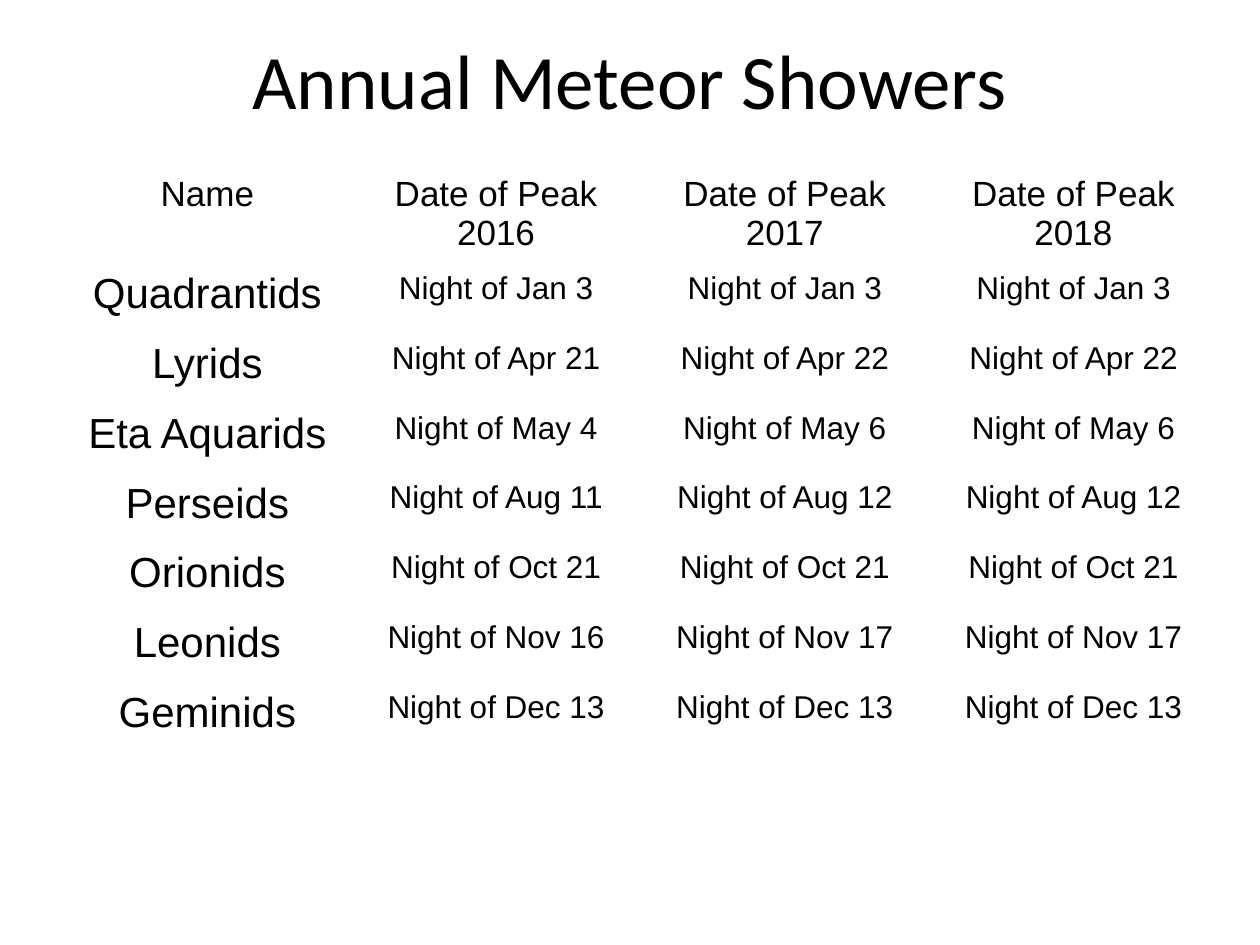
from pptx import Presentation
from pptx.dml.color import RGBColor
from pptx.enum.text import MSO_ANCHOR, PP_ALIGN
from pptx.util import Pt

CENTER = PP_ALIGN.CENTER
MIDDLE = MSO_ANCHOR.MIDDLE

COLORS = {"text": "000000"}
TITLE_FONT = {"name": "Calibri", "size": Pt(44)}
HEADER_FONT = {"name": "Arial", "size": Pt(20)}
NAME_FONT = {"name": "Arial", "size": Pt(24)}
DATE_FONT = {"name": "Arial", "size": Pt(18)}

YEARS = (2016, 2017, 2018)
SHOWERS = [
    ("Quadrantids", "Jan 3", "Jan 3", "Jan 3"),
    ("Lyrids", "Apr 21", "Apr 22", "Apr 22"),
    ("Eta Aquarids", "May 4", "May 6", "May 6"),
    ("Perseids", "Aug 11", "Aug 12", "Aug 12"),
    ("Orionids", "Oct 21", "Oct 21", "Oct 21"),
    ("Leonids", "Nov 16", "Nov 17", "Nov 17"),
    ("Geminids", "Dec 13", "Dec 13", "Dec 13"),
]


def write_centered(tf, text, font_format):
    p = tf.paragraphs[0]
    p.alignment = CENTER
    r = p.add_run()
    r.text = text
    for key, value in font_format.items():
        setattr(r.font, key, value)
    r.font.color.rgb = RGBColor.from_string(COLORS["text"])


def add_title(s, left, top, width, height, text):
    tf = s.shapes.add_textbox(Pt(left), Pt(top), Pt(width), Pt(height)).text_frame
    tf.word_wrap = True
    tf.vertical_anchor = MIDDLE
    write_centered(tf, text, TITLE_FONT)


def add_shower_table(s, left, top, width, header_height, row_height):
    rows = [["Name"] + [f"Date of Peak {year}" for year in YEARS]]
    rows += [[name] + [f"Night of {date}" for date in dates]
             for name, *dates in SHOWERS]
    height = header_height + row_height * len(SHOWERS)
    table = s.shapes.add_table(len(rows), len(rows[0]), Pt(left), Pt(top),
                               Pt(width), Pt(height)).table
    table.first_row = table.horz_banding = False
    for column in table.columns:
        column.width = Pt(width / len(rows[0]))
    for i, texts in enumerate(rows):
        table.rows[i].height = Pt(row_height if i else header_height)
        for j, text in enumerate(texts):
            cell = table.cell(i, j)
            cell.fill.background()
            body_font = DATE_FONT if j else NAME_FONT
            write_centered(cell.text_frame, text, body_font if i else HEADER_FONT)


def main():
    prs = Presentation()
    prs.slide_width, prs.slide_height = Pt(720), Pt(540)
    s = prs.slides.add_slide(prs.slide_layouts[6])
    add_title(s, 36, 0, 648, 90, "Annual Meteor Showers")
    add_shower_table(s, 36, 96, 660, 36, 39.87)
    prs.save("out.pptx")


if __name__ == "__main__":
    main()
